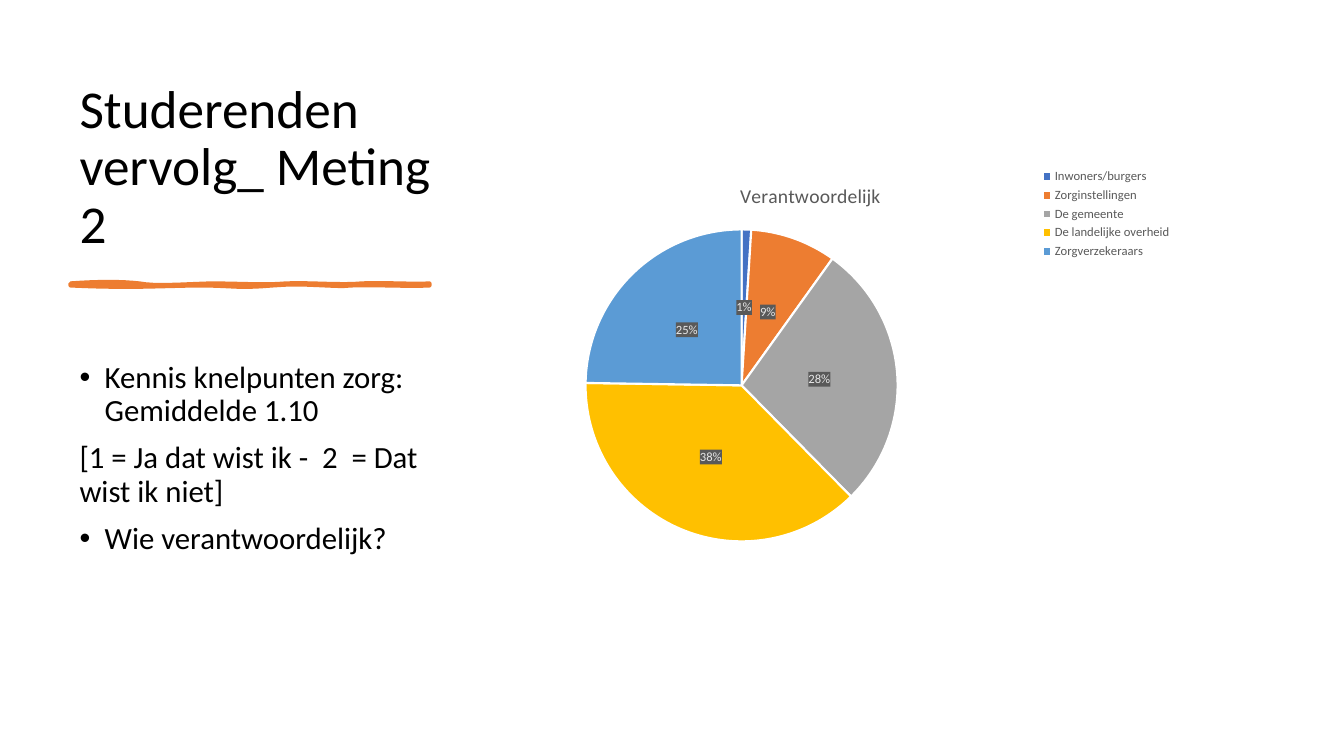
from dataclasses import dataclass

from lxml import etree
from pptx import Presentation
from pptx.chart.data import CategoryChartData
from pptx.dml.color import RGBColor
from pptx.enum.chart import XL_CHART_TYPE, XL_LABEL_POSITION, XL_LEGEND_POSITION
from pptx.enum.text import MSO_ANCHOR
from pptx.oxml import parse_xml
from pptx.oxml.ns import nsdecls, qn
from pptx.util import Inches, Pt

PIE = XL_CHART_TYPE.PIE
CENTER = XL_LABEL_POSITION.CENTER
CORNER = XL_LEGEND_POSITION.CORNER
TOP, BOTTOM = MSO_ANCHOR.TOP, MSO_ANCHOR.BOTTOM


@dataclass(frozen=True)
class Theme:
    font: str = "Calibri"
    ink: str = "000000"
    accent: str = "ED7D31"
    muted: str = "595959"
    label: str = "E8E8E8"
    paper: str = "FFFFFF"
    slices: tuple = ("4472C4", "ED7D31", "A5A5A5", "FFC000", "5B9BD5")
    title_size: float = 38
    body_size: float = 22
    chart_title_size: float = 14
    chart_size: float = 10
    small_size: float = 9


def apply(obj, values):
    for name, value in values.items():
        setattr(obj, name, value)


def bezier(p0, p1, p2, p3, steps=8):
    for i in range(1, steps + 1):
        t = i / steps
        u = 1 - t
        yield tuple(u**3 * a + 3 * u * u * t * b + 3 * u * t * t * c + t**3 * d
                    for a, b, c, d in zip(p0, p1, p2, p3))


class SlideBuilder:
    """Places elements by percentages of the slide's width and height."""

    def __init__(self, prs, theme):
        self.prs, self.theme = prs, theme
        self.s = prs.slides.add_slide(prs.slide_layouts[6])
        apply(self.s.background.fill, {})
        self.paint(self.s.background.fill, theme.paper)

    def place(self, x, y):
        return (round(self.prs.slide_width * x / 100),
                round(self.prs.slide_height * y / 100))

    def paint(self, fill, color):
        fill.solid()
        fill.fore_color.rgb = RGBColor.from_string(color)

    def style(self, font, size, color):
        apply(font, {"name": self.theme.font, "size": Pt(size), "bold": False})
        font.color.rgb = RGBColor.from_string(color)

    def text(self, x, y, w, h, lines, size, anchor=TOP):
        """Each line is a (text, bulleted) pair."""
        tf = self.s.shapes.add_textbox(*self.place(x, y), *self.place(w, h)).text_frame
        apply(tf, {"word_wrap": True, "vertical_anchor": anchor})
        for i, (line, bulleted) in enumerate(lines):
            p = tf.paragraphs[0] if i == 0 else tf.add_paragraph()
            apply(p, {"line_spacing": 0.9, "space_before": Pt(10 if i else 0)})
            if bulleted:
                pPr = p._p.get_or_add_pPr()
                pPr.set("marL", str(Inches(0.25)))
                pPr.set("indent", str(-Inches(0.25)))
                etree.SubElement(pPr, qn("a:buFont")).set("typeface", "Arial")
                etree.SubElement(pPr, qn("a:buChar")).set("char", "•")
            r = p.add_run()
            r.text = line
            self.style(r.font, size, self.theme.ink)

    def brush_stroke(self, x, y, start, curves, width):
        """Closed outline of cubic curves, in inches from (x, y)."""
        points, last = [], start
        for curve in curves:
            points += bezier(last, *curve)
            last = curve[-1]
        fb = self.s.shapes.build_freeform(*map(Inches, start))
        fb.add_line_segments([(Inches(a), Inches(b)) for a, b in points])
        sp = fb.convert_to_shape(*self.place(x, y))
        sp.shadow.inherit = False
        self.paint(sp.fill, self.theme.accent)
        self.paint(sp.line.fill, self.theme.accent)
        sp.line.width = Pt(width)

    def pie(self, x, y, w, h, title, values, plot):
        th = self.theme
        data = CategoryChartData()
        data.categories = list(values)
        data.add_series("Series 1", list(values.values()))
        chart = self.s.shapes.add_chart(
            PIE, *self.place(x, y), *self.place(w, h), data).chart
        self.style(chart.font, th.chart_size, th.ink)

        # Title and legend
        tf = chart.chart_title.text_frame
        tf.text = title
        self.style(tf.paragraphs[0].runs[0].font, th.chart_title_size, th.muted)
        chart.has_legend = True
        apply(chart.legend, {"position": CORNER, "include_in_layout": False})
        self.style(chart.legend.font, th.small_size, th.muted)

        # Slices
        pie = chart.plots[0]
        pie.vary_by_categories = True
        for i, color in enumerate(th.slices):
            fmt = pie.series[0].points[i].format
            self.paint(fmt.fill, color)
            self.paint(fmt.line.fill, th.paper)
            fmt.line.width = Pt(1.5)

        # Percentage labels on dark tags
        labels = pie.series[0].data_labels
        apply(labels, {"show_percentage": True, "show_value": False,
                       "number_format": "0%", "number_format_is_linked": False,
                       "position": CENTER})
        self.style(labels.font, th.small_size, th.label)
        labels._element.find(qn("c:txPr")).addprevious(parse_xml(
            f'<c:spPr {nsdecls("c", "a")}><a:solidFill>'
            f'<a:srgbClr val="{th.muted}"/></a:solidFill></c:spPr>'))

        # Plot position as shares of the chart
        area = chart._chartSpace.chart.plotArea
        for old in area.findall(qn("c:layout")):
            area.remove(old)
        sizes = "".join(f'<c:{k} val="{v}"/>' for k, v in zip("xywh", plot))
        area.insert(0, parse_xml(
            f'<c:layout {nsdecls("c")}><c:manualLayout><c:layoutTarget val="inner"/>'
            f'<c:xMode val="edge"/><c:yMode val="edge"/>{sizes}'
            '</c:manualLayout></c:layout>'))


def main():
    prs = Presentation()
    apply(prs, {"slide_width": Inches(13.33), "slide_height": Inches(7.5)})
    theme = Theme()
    slide = SlideBuilder(prs, theme)

    # Left column: title, brush stroke, findings
    left, width = 5.18, 28.13
    slide.text(left, 9.33, width, 25, [("Studerenden vervolg_ Meting 2", False)],
               theme.title_size, BOTTOM)
    slide.brush_stroke(5.25, 37.5, (0, 0), [
        ((0.27, -0.02), (0.51, -0.02), (0.68, 0)),
        ((0.85, 0.03), (1.07, 0.01), (1.39, 0)),
        ((1.71, 0), (1.9, 0.02), (2.14, 0)),
        ((2.38, -0.01), (2.69, 0.02), (2.89, 0)),
        ((3.09, -0.01), (3.42, 0.01), (3.56, 0)),
        ((3.56, 0.01), (3.56, 0.02), (3.56, 0.02)),
        ((3.38, 0.03), (2.94, 0.01), (2.78, 0.02)),
        ((2.62, 0.04), (2.34, -0.01), (2, 0.02)),
        ((1.65, 0.05), (1.61, 0.02), (1.29, 0.02)),
        ((0.96, 0.02), (0.62, 0.05), (0, 0.02)),
        ((0, 0.02), (0, 0.01), (0, 0)),
    ], 3)
    slide.text(left, 47.2, width, 43.47, [
        ("Kennis knelpunten zorg: Gemiddelde 1.10", True),
        ("[1 = Ja dat wist ik -  2  = Dat wist ik niet]", False),
        ("Wie verantwoordelijk?", True),
    ], theme.body_size)

    # Right side: who is responsible
    slide.pie(33.31, 21.87, 54, 52, "Verantwoordelijk", {
        "Inwoners/burgers": 1,
        "Zorginstellingen": 9,
        "De gemeente": 28,
        "De landelijke overheid": 38,
        "Zorgverzekeraars": 25,
    }, plot=(0.19, 0.16, 0.43, 0.8))

    prs.save("out.pptx")


if __name__ == "__main__":
    main()
